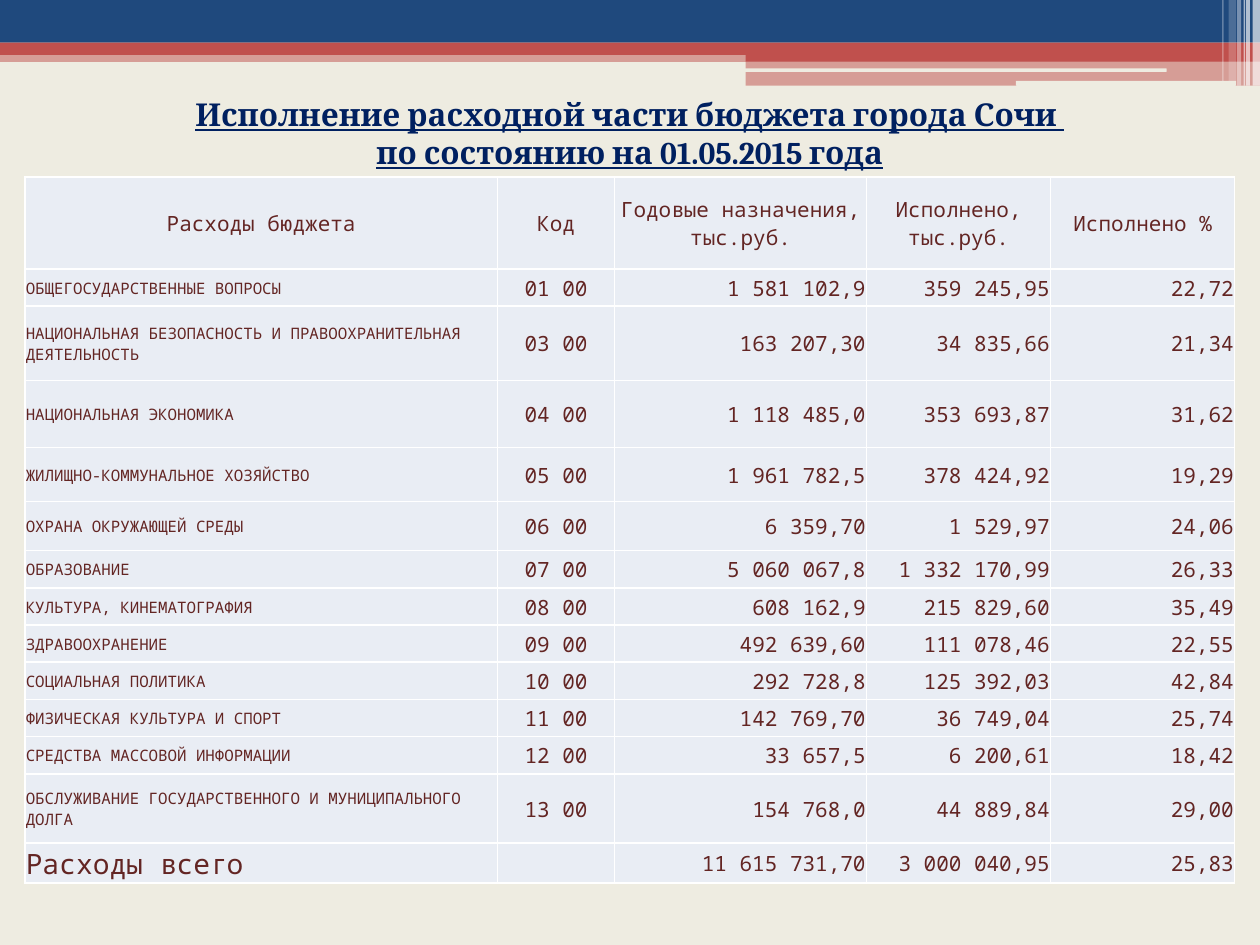
from dataclasses import dataclass

from lxml import etree
from pptx import Presentation
from pptx import util as u
from pptx.dml.color import RGBColor
from pptx.enum import shapes, text
from pptx.oxml.ns import qn

LEFT, CENTER, RIGHT = text.PP_ALIGN.LEFT, text.PP_ALIGN.CENTER, text.PP_ALIGN.RIGHT


@dataclass(frozen=True)
class Theme:
    paper: str = "EEECE1"
    navy: str = "1F497D"
    red: str = "C0504D"
    white: str = "FFFFFF"
    cell: str = "E9EDF4"
    title_ink: str = "002060"
    table_ink: str = "632523"
    title_font: str = "Cambria"
    table_font: str = "Noto Sans Mono"
    title_size: int = 18
    body_size: int = 12
    label_size: int = 9
    total_size: int = 16


class Deck:
    def __init__(self, theme):
        self.theme = theme
        self.prs = Presentation()
        self.prs.slide_width, self.prs.slide_height = u.Cm(25.4), u.Cm(19.05)
        self.s = self.prs.slides.add_slide(self.prs.slide_layouts[6])
        self.paint(self.s.background.fill, theme.paper)

    def paint(self, fill, color):
        fill.solid()
        fill.fore_color.rgb = RGBColor.from_string(color)

    def bar(self, box, color, alpha=100, rounded=False):
        kind = shapes.MSO_SHAPE.ROUNDED_RECTANGLE if rounded else shapes.MSO_SHAPE.RECTANGLE
        sp = self.s.shapes.add_shape(kind, *map(u.Cm, box))
        sp.shadow.inherit = False
        sp.line.fill.background()
        self.paint(sp.fill, color)
        if alpha < 100:
            clr = sp.element.spPr.find(qn("a:solidFill"))[0]
            etree.SubElement(clr, qn("a:alpha"), val=str(alpha * 1000))

    def set_text(self, p, words, align, size, font, color):
        p.text = words
        p.alignment = align
        for r in p.runs:
            r.font.size = u.Pt(size)
            r.font.name = font
            r.font.color.rgb = RGBColor.from_string(color)

    def title(self, box, lines):
        t = self.theme
        tf = self.s.shapes.add_textbox(*map(u.Cm, box)).text_frame
        tf.word_wrap = True
        tf.text = "\n".join(lines)
        for p in tf.paragraphs:
            self.set_text(p, p.text, CENTER, t.title_size, t.title_font, t.title_ink)
            for r in p.runs:
                r.font.bold = r.font.underline = True

    def border(self, cell):
        tc_pr = cell._tc.get_or_add_tcPr()
        for side in ("a:lnL", "a:lnR", "a:lnT", "a:lnB"):
            ln = etree.SubElement(tc_pr, qn(side), w=str(u.Pt(1)))
            fill = etree.SubElement(ln, qn("a:solidFill"))
            etree.SubElement(fill, qn("a:srgbClr"), val=self.theme.white)

    def cell(self, cell, words, align, size):
        t = self.theme
        self.border(cell)
        self.paint(cell.fill, t.cell)
        cell.margin_left = cell.margin_right = cell.margin_top = u.Cm(0.02)
        cell.margin_bottom = 0
        cell.vertical_anchor = text.MSO_ANCHOR.MIDDLE
        self.set_text(cell.text_frame.paragraphs[0], words, align, size, t.table_font, t.table_ink)

    def table(self, left, top, widths, heights, rows):
        t = self.theme
        frame = self.s.shapes.add_table(len(rows), len(widths), u.Cm(left), u.Cm(top),
                                        u.Cm(sum(widths)), u.Cm(sum(heights)))
        tbl = frame.table
        tbl.first_row = tbl.horz_banding = False
        for col, width in zip(tbl.columns, widths):
            col.width = u.Cm(width)
        for row, height in zip(tbl.rows, heights):
            row.height = u.Cm(height)
        aligns = (LEFT, CENTER, RIGHT, RIGHT, RIGHT)
        for i, row in enumerate(rows):
            label = t.total_size if i == len(rows) - 1 else t.label_size
            for j, words in enumerate(row):
                align = CENTER if i == 0 else aligns[j]
                size = label if i and j == 0 else t.body_size
                self.cell(tbl.cell(i, j), words, align, size)


ROWS = (
    ("Расходы бюджета", "Код", "Годовые назначения, тыс.руб.", "Исполнено, тыс.руб.", "Исполнено %"),
    ("ОБЩЕГОСУДАРСТВЕННЫЕ ВОПРОСЫ", "01 00", "1 581 102,9", "359 245,95", "22,72"),
    ("НАЦИОНАЛЬНАЯ БЕЗОПАСНОСТЬ И ПРАВООХРАНИТЕЛЬНАЯ ДЕЯТЕЛЬНОСТЬ",
     "03 00", "163 207,30", "34 835,66", "21,34"),
    ("НАЦИОНАЛЬНАЯ ЭКОНОМИКА", "04 00", "1 118 485,0", "353 693,87", "31,62"),
    ("ЖИЛИЩНО-КОММУНАЛЬНОЕ ХОЗЯЙСТВО", "05 00", "1 961 782,5", "378 424,92", "19,29"),
    ("ОХРАНА ОКРУЖАЮЩЕЙ СРЕДЫ", "06 00", "6 359,70", "1 529,97", "24,06"),
    ("ОБРАЗОВАНИЕ", "07 00", "5 060 067,8", "1 332 170,99", "26,33"),
    ("КУЛЬТУРА, КИНЕМАТОГРАФИЯ", "08 00", "608 162,9", "215 829,60", "35,49"),
    ("ЗДРАВООХРАНЕНИЕ", "09 00", "492 639,60", "111 078,46", "22,55"),
    ("СОЦИАЛЬНАЯ ПОЛИТИКА", "10 00", "292 728,8", "125 392,03", "42,84"),
    ("ФИЗИЧЕСКАЯ КУЛЬТУРА И СПОРТ", "11 00", "142 769,70", "36 749,04", "25,74"),
    ("СРЕДСТВА МАССОВОЙ ИНФОРМАЦИИ", "12 00", "33 657,5", "6 200,61", "18,42"),
    ("ОБСЛУЖИВАНИЕ ГОСУДАРСТВЕННОГО И МУНИЦИПАЛЬНОГО ДОЛГА",
     "13 00", "154 768,0", "44 889,84", "29,00"),
    ("Расходы всего", "", "11 615 731,70", "3 000 040,95", "25,83"),
)
WIDTHS = (9.53, 2.36, 5.08, 3.71, 3.71)
HEIGHTS = (1.85, 0.75, 1.5, 1.35, 1.09, 0.99) + (0.75,) * 6 + (1.39, 0.81)
STRIPES = ((25.25, 0.15, 1.73, 65), (25.12, 0.08, 1.73, 65), (25.07, 0.03, 1.73, 60),
           (24.94, 0.08, 1.73, 40), (24.77, 0.15, 1.63, 20), (24.64, 0.03, 1.63, 30))


def main():
    theme = Theme()
    deck = Deck(theme)
    deck.bar((0, 1.02, 25.4, 0.23), theme.red, 50)
    deck.bar((0, 0, 25.4, 0.86), theme.navy)
    deck.bar((0, 0.86, 25.4, 0.25), theme.red)
    deck.bar((15.03, 0.99, 10.37, 0.25), theme.red)
    deck.bar((15.03, 1.23, 10.37, 0.5), theme.red, 50)
    deck.bar((15.01, 1.38, 8.51, 0.07), theme.paper, rounded=True)
    deck.bar((20.48, 1.63, 4.44, 0.1), theme.paper, rounded=True)
    for left, width, height, alpha in STRIPES:
        deck.bar((left, 0, width, height), theme.white, alpha)
    deck.table(0.5, 3.57, WIDTHS, HEIGHTS, ROWS)
    deck.title((0.5, 1.8, 24.4, 1.8), (
        "Исполнение расходной части бюджета города Сочи ",
        "по состоянию на 01.05.2015 года"))
    deck.prs.save("out.pptx")


if __name__ == "__main__":
    main()
